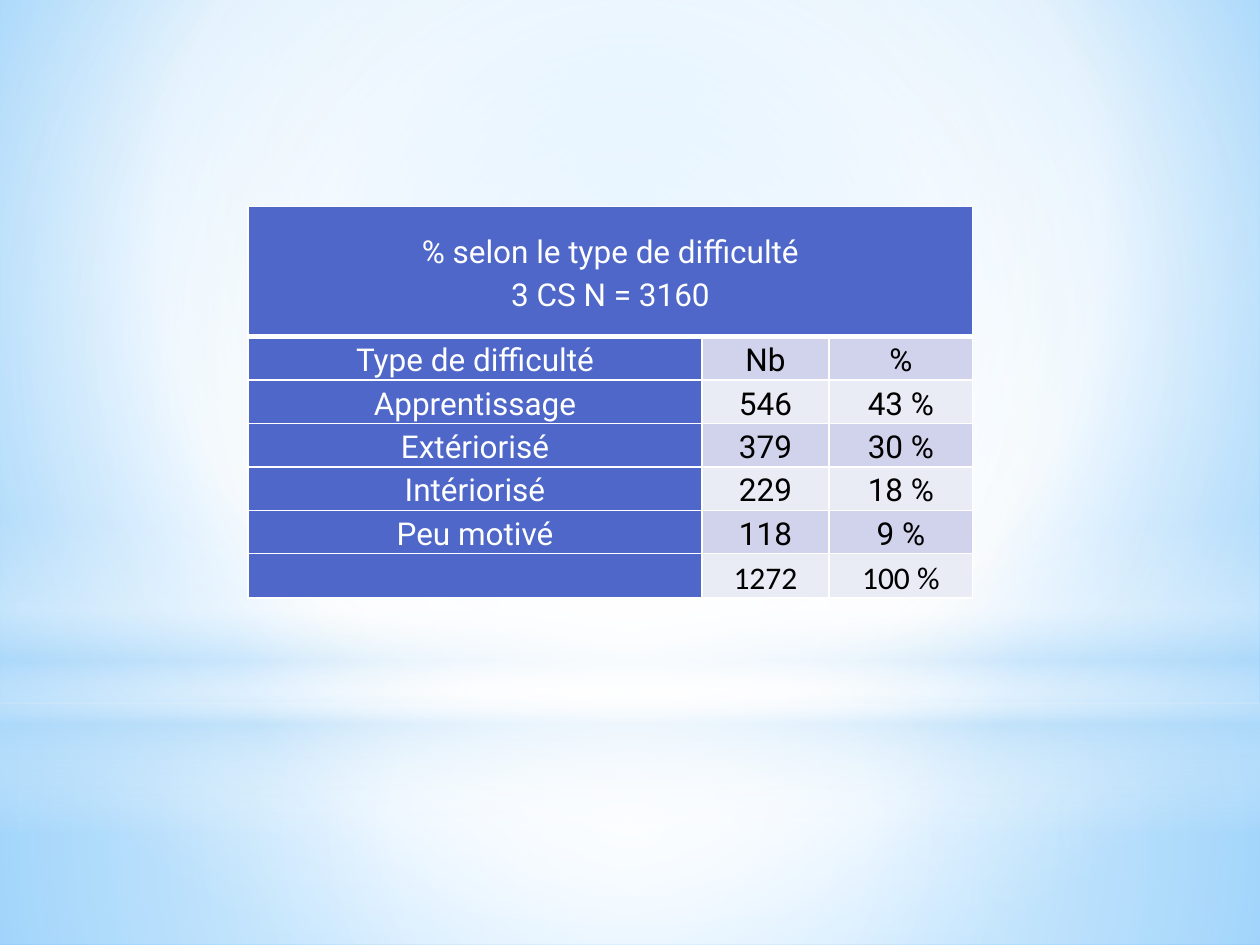
from lxml import etree
from pptx import Presentation
from pptx.dml.color import RGBColor
from pptx.enum.shapes import MSO_SHAPE
from pptx.enum.text import MSO_ANCHOR, PP_ALIGN
from pptx.oxml.ns import qn
from pptx.util import Inches, Pt

RECT, OVAL = MSO_SHAPE.RECTANGLE, MSO_SHAPE.OVAL
CENTER, MIDDLE = PP_ALIGN.CENTER, MSO_ANCHOR.MIDDLE
COLORS = {
    "white": "FFFFFF", "black": "000000", "header": "4E67C8",
    "band_dark": "D0D3EB", "band_light": "E9EBF5",
    "sky": "9ED5FF", "deep_sky": "5BB9FF", "pale_sky": "B4DCFA",
}


def set_gradient(fill, parent, stops, focus=None):
    """Fill with (position, colour, opacity) stops, circular around focus or else downwards."""
    fill.gradient()
    grad = parent.find(".//" + qn("a:gradFill"))
    for child in list(grad):
        grad.remove(child)
    gs_list = etree.SubElement(grad, qn("a:gsLst"))
    for pos, color, opacity in stops:
        gs = etree.SubElement(gs_list, qn("a:gs"), pos=str(pos * 1000))
        clr = etree.SubElement(gs, qn("a:srgbClr"), val=COLORS[color])
        if opacity < 100:
            etree.SubElement(clr, qn("a:alpha"), val=str(opacity * 1000))
    if focus:
        circle = etree.SubElement(grad, qn("a:path"), path="circle")
        sides = {side: str(share * 1000) for side, share in zip("ltrb", focus)}
        etree.SubElement(circle, qn("a:fillToRect"), **sides)
    else:
        etree.SubElement(grad, qn("a:lin"), ang="5400000", scaled="0")


def set_borders(cell, bottom=1):
    tc_pr = cell._tc.get_or_add_tcPr()
    for side, width in (("L", 1), ("R", 1), ("T", 1), ("B", bottom)):
        ln = etree.SubElement(tc_pr, qn("a:ln" + side), w=str(Pt(width)))
        solid = etree.SubElement(ln, qn("a:solidFill"))
        etree.SubElement(solid, qn("a:srgbClr"), val=COLORS["white"])


prs = Presentation()
prs.slide_width, prs.slide_height = Inches(10), Inches(7.5)
s = prs.slides.add_slide(prs.slide_layouts[6])

# Background glow and horizon
set_gradient(s.background.fill, s.element,
             [(0, "sky", 100), (60, "white", 100), (100, "deep_sky", 100)],
             (20, 10, 20, 60))

MID = (50, 50, 50, 50)
HORIZON = 5.58
layers = [  # shape, top, height, stops, focus
    (RECT, HORIZON, 7.5 - HORIZON,
     [(0, "white", 91), (37, "white", 76), (100, "pale_sky", 79)], MID),
    (RECT, 0, HORIZON,
     [(0, "white", 89), (48, "white", 62), (100, "pale_sky", 79)], MID),
    (RECT, 4.12, 2.5,
     [(0, "white", 0), (29, "white", 30), (45, "pale_sky", 40),
      (55, "white", 26), (65, "pale_sky", 60), (100, "white", 0)], None),
    (OVAL, 1.75, HORIZON, [(0, "white", 100), (56, "white", 0)], MID),
]
for kind, top, height, stops, focus in layers:
    sp = s.shapes.add_shape(kind, 0, Inches(top), prs.slide_width, Inches(height))
    sp.shadow.inherit = False
    sp.line.fill.background()
    set_gradient(sp.fill, sp.element, stops, focus)

# Table of difficulty types
rows = [
    ("% selon le type de difficulté\v3 CS N = 3160", "", ""),
    ("Type de difficulté", "Nb", "%"),
    ("Apprentissage", "546", "43 %"),
    ("Extériorisé", "379", "30 %"),
    ("Intériorisé", "229", "18 %"),
    ("Peu motivé", "118", "9 %"),
    ("", "1272", "100 %"),
]
col_widths = [3.6, 1.01, 1.14]
title_height, row_height = 1.03, 0.345
last = len(rows) - 1
table = s.shapes.add_table(
    len(rows), len(col_widths), Inches(1.97), Inches(1.64),
    Inches(sum(col_widths)), Inches(title_height + last * row_height)).table
for col, width in zip(table.columns, col_widths):
    col.width = Inches(width)

for i, texts in enumerate(rows):
    table.rows[i].height = Inches(row_height if i else title_height)
    for j, text in enumerate(texts):
        cell = table.cell(i, j)
        is_header = i == 0 or j == 0
        band = "band_dark" if i % 2 else "band_light"
        set_borders(cell, bottom=1 if i else 3)
        cell.fill.solid()
        cell.fill.fore_color.rgb = RGBColor.from_string(COLORS["header" if is_header else band])
        cell.vertical_anchor = MIDDLE
        cell.margin_left = cell.margin_right = Inches(0.05)
        cell.margin_top = cell.margin_bottom = 0
        p = cell.text_frame.paragraphs[0]
        p.alignment, p.line_spacing = CENTER, 1.15
        for k, line in enumerate(text.split("\v") if text else []):
            if k:
                p.add_line_break()
            r = p.add_run()
            r.text = line
            r.font.size, r.font.bold = Pt(18), False
            r.font.name = "Calibri" if i == last else "Roboto"
            r.font.color.rgb = RGBColor.from_string(COLORS["white" if is_header else "black"])
table.cell(0, 0).merge(table.cell(0, len(col_widths) - 1))

prs.save("out.pptx")
